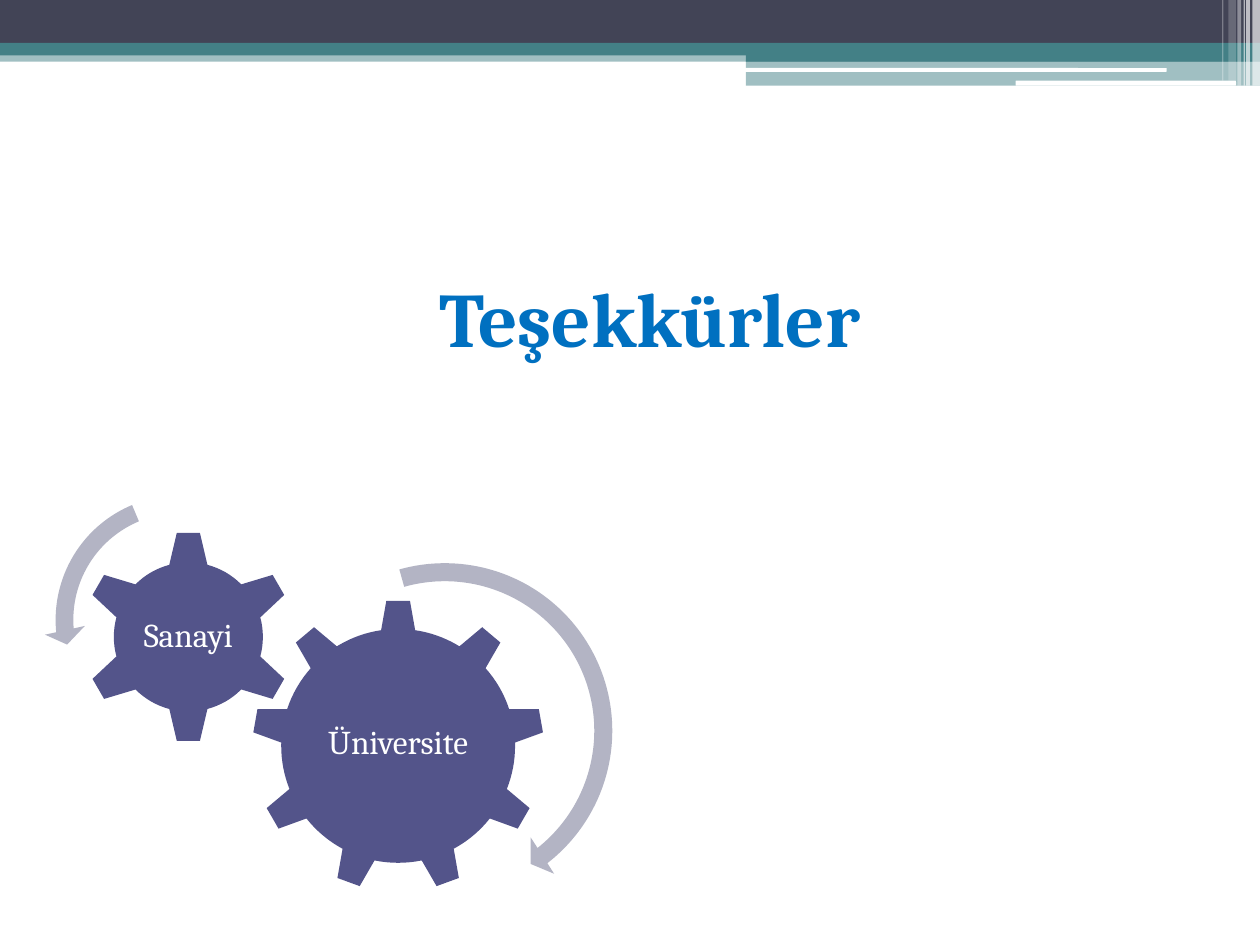
from lxml import etree
from pptx import Presentation
from pptx.dml.color import RGBColor
from pptx.enum.shapes import MSO_SHAPE
from pptx.enum.text import MSO_ANCHOR, MSO_AUTO_SIZE, PP_ALIGN
from pptx.oxml.ns import qn
from pptx.util import Inches, Pt

RECTANGLE = MSO_SHAPE.RECTANGLE
ROUNDED = MSO_SHAPE.ROUNDED_RECTANGLE
TITLE_ONLY_LAYOUT = 5
FONT = "Cambria"

WHITE = RGBColor(0xFF, 0xFF, 0xFF)
NAVY = RGBColor(0x42, 0x44, 0x56)
TEAL = RGBColor(0x43, 0x80, 0x86)
INDIGO = RGBColor(0x53, 0x54, 0x8A)
LAVENDER = RGBColor(0xB3, 0xB4, 0xC4)
BLUE = RGBColor(0x00, 0x70, 0xC0)

# kind, left, top, width, height, colour, opacity in percent
BANDS = [
    (RECTANGLE, 0, 0.4, 10, 0.09, TEAL, 50),
    (RECTANGLE, 0, 0, 10, 0.34, NAVY, 100),
    (RECTANGLE, 0, 0.34, 10, 0.1, TEAL, 100),
    (RECTANGLE, 5.92, 0.39, 4.08, 0.1, TEAL, 100),
    (RECTANGLE, 5.92, 0.48, 4.08, 0.2, TEAL, 50),
    (ROUNDED, 5.91, 0.54, 3.35, 0.03, WHITE, 100),
    (ROUNDED, 8.06, 0.64, 1.75, 0.04, WHITE, 100),
]
# left, width, height, opacity in percent
STRIPES = [
    (9.94, 0.06, 0.68, 65),
    (9.89, 0.03, 0.68, 65),
    (9.87, 0.01, 0.68, 60),
    (9.82, 0.03, 0.68, 40),
    (9.75, 0.06, 0.64, 20),
    (9.7, 0.01, 0.64, 30),
]


def add_filled_shape(shapes, kind, left, top, width, height, color, opacity=100):
    shape = shapes.add_shape(
        kind, Inches(left), Inches(top), Inches(width), Inches(height)
    )
    shape.shadow.inherit = False
    shape.line.fill.background()
    shape.fill.solid()
    shape.fill.fore_color.rgb = color
    if opacity < 100:
        color_element = shape.fill._xPr.find(".//" + qn("a:srgbClr"))
        alpha = etree.SubElement(color_element, qn("a:alpha"))
        alpha.set("val", str(opacity * 1000))
    return shape


def write_text(shape, text, size, color, bold=False):
    paragraph = shape.text_frame.paragraphs[0]
    paragraph.alignment = PP_ALIGN.CENTER
    run = paragraph.add_run()
    run.text = text
    run.font.name = FONT
    run.font.size = Pt(size)
    run.font.bold = bold
    run.font.color.rgb = color
    return paragraph


def add_header(slide):
    for band in BANDS:
        add_filled_shape(slide.shapes, *band)
    for left, width, height, opacity in STRIPES:
        add_filled_shape(
            slide.shapes, RECTANGLE, left, 0, width, height, WHITE, opacity
        )


def add_gear(shapes, kind, left, top, size, label):
    gear = add_filled_shape(shapes, kind, left, top, size, size, INDIGO)
    frame = gear.text_frame
    frame.word_wrap = True
    frame.vertical_anchor = MSO_ANCHOR.MIDDLE
    frame.margin_left = frame.margin_right = Inches(0.03)
    frame.margin_top = frame.margin_bottom = Inches(0.03)
    write_text(gear, label, 19, WHITE).line_spacing = 0.9


def add_turning_arrow(shapes, kind, left, top, size, adjustments):
    arrow = add_filled_shape(shapes, kind, left, top, size, size, LAVENDER)
    for index, value in enumerate(adjustments):
        arrow.adjustments[index] = value


def add_gear_diagram(slide):
    shapes = slide.shapes.add_group_shape().shapes
    add_gear(shapes, MSO_SHAPE.GEAR_9, 2, 4.76, 2.32, "Üniversite")
    add_gear(shapes, MSO_SHAPE.GEAR_6, 0.65, 4.21, 1.69, "Sanayi")
    add_turning_arrow(
        shapes, MSO_SHAPE.CIRCULAR_ARROW, 2.1, 4.37, 2.86,
        (0.05, 3.13, 31.17, 152.57, 0.06),
    )
    add_turning_arrow(
        shapes, MSO_SHAPE.LEFT_CIRCULAR_ARROW, 0.35, 3.84, 2.16,
        (0.065, 4.3, 104.89, 148.38, 0.075),
    )


def format_title(slide):
    title = slide.shapes.title
    title.left, title.top = Inches(0.67), Inches(2.1)
    title.width, title.height = Inches(8.98), Inches(1.45)
    frame = title.text_frame
    frame.word_wrap = True
    frame.auto_size = MSO_AUTO_SIZE.NONE
    frame.vertical_anchor = MSO_ANCHOR.TOP
    write_text(title, "Teşekkürler", 44, BLUE, bold=True)


def main():
    presentation = Presentation()
    presentation.slide_width = Inches(10)
    presentation.slide_height = Inches(7.5)
    layout = presentation.slide_layouts[TITLE_ONLY_LAYOUT]
    slide = presentation.slides.add_slide(layout)
    add_header(slide)
    add_gear_diagram(slide)
    format_title(slide)
    presentation.save("out.pptx")


if __name__ == "__main__":
    main()
